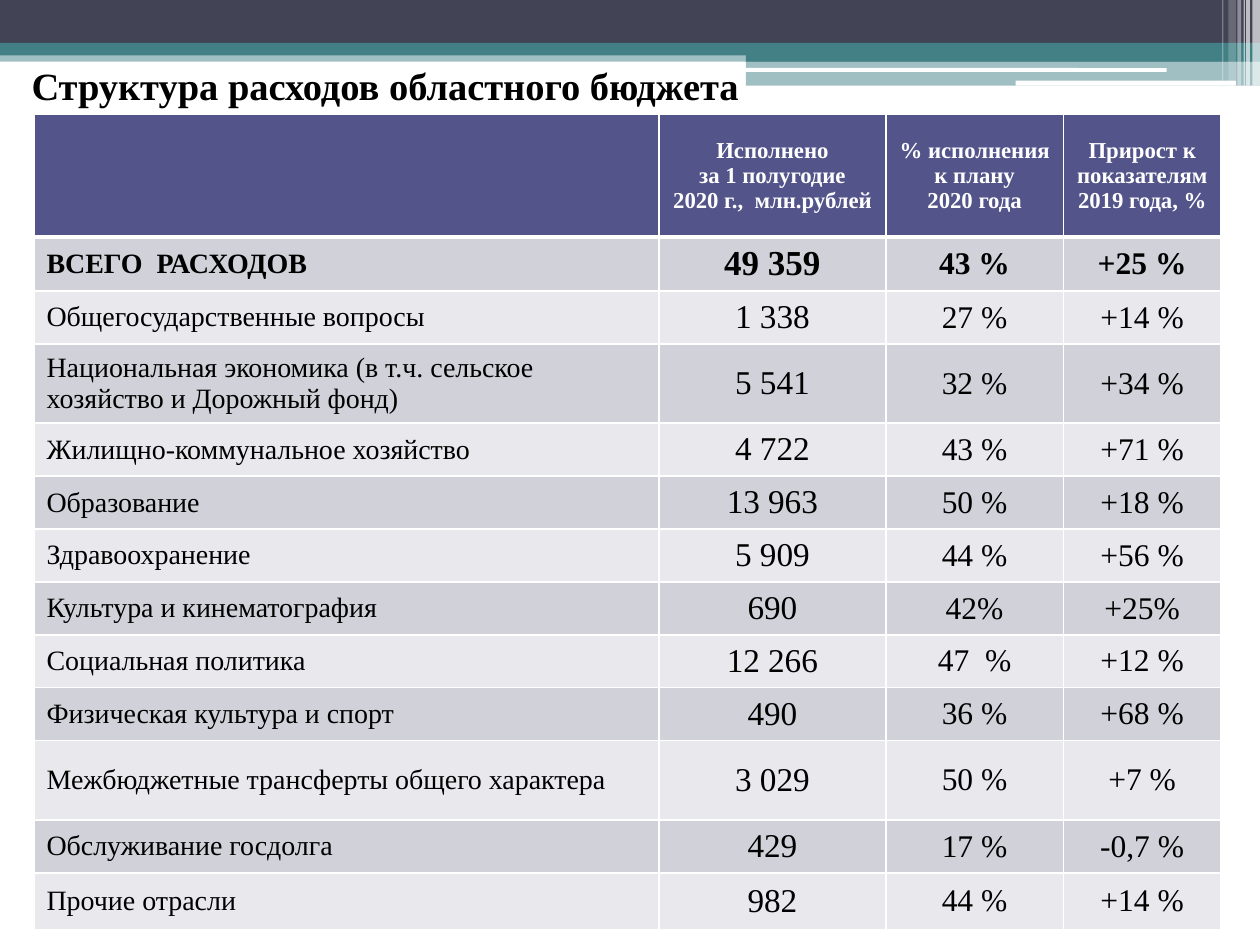
from typing import NamedTuple, Optional

import pptx
import pptx.dml.color
import pptx.enum.shapes
import pptx.enum.text
import pptx.oxml
import pptx.oxml.ns
import pptx.util

Inches = pptx.util.Inches
Pt = pptx.util.Pt
RGBColor = pptx.dml.color.RGBColor
Align = pptx.enum.text.PP_ALIGN
Shape = pptx.enum.shapes.MSO_SHAPE
MIDDLE = pptx.enum.text.MSO_ANCHOR.MIDDLE

WHITE = RGBColor(0xFF, 0xFF, 0xFF)
BLACK = RGBColor(0, 0, 0)
SLATE = RGBColor(0x42, 0x44, 0x56)
TEAL = RGBColor(0x43, 0x80, 0x86)
VIOLET = RGBColor(0x53, 0x54, 0x8A)
DARK = RGBColor(0xD1, 0xD1, 0xDA)
LIGHT = RGBColor(0xE9, 0xE9, 0xED)
FONT = "Times New Roman"


class Bar(NamedTuple):
    left: float
    top: float
    width: float
    height: float
    color: RGBColor
    alpha: int = 100
    round: bool = False


class Item(NamedTuple):
    name: str
    sum: str
    share: str
    growth: str
    height: float = 0.42


BARS = [
    # Bands across the top
    Bar(0, 0.4, 10, 0.09, TEAL, 50),
    Bar(0, 0, 10, 0.34, SLATE),
    Bar(0, 0.34, 10, 0.1, TEAL),
    Bar(5.92, 0.39, 4.08, 0.1, TEAL),
    Bar(5.92, 0.48, 4.08, 0.2, TEAL, 50),
    Bar(5.91, 0.54, 3.35, 0.03, WHITE, round=True),
    Bar(8.06, 0.64, 1.75, 0.04, WHITE, round=True),
    # Thin stripes in the corner
    Bar(9.94, 0, 0.06, 0.68, WHITE, 65),
    Bar(9.89, 0, 0.03, 0.68, WHITE, 65),
    Bar(9.87, 0, 0.01, 0.68, WHITE, 60),
    Bar(9.82, 0, 0.03, 0.68, WHITE, 40),
    Bar(9.75, 0, 0.06, 0.64, WHITE, 20),
    Bar(9.7, 0, 0.01, 0.64, WHITE, 30),
]

COLS = [4.96, 1.8, 1.41, 1.25]
HEAD = Item(
    "",
    "Исполнено\nза 1 полугодие\n2020 г.,  млн.рублей",
    "% исполнения\nк плану\n2020 года",
    "Прирост к показателям 2019 года, %",
    0.97,
)
ITEMS = [
    Item("ВСЕГО  РАСХОДОВ", "49 359", "43 %", "+25 %", 0.43),
    Item("Общегосударственные вопросы", "1 338", "27 %", "+14 %"),
    Item("Национальная экономика (в т.ч. сельское хозяйство и Дорожный фонд)",
         "5 541", "32 %", "+34 %", 0.63),
    Item("Жилищно-коммунальное хозяйство", "4 722", "43 %", "+71 %"),
    Item("Образование", "13 963", "50 %", "+18 %"),
    Item("Здравоохранение", "5 909", "44 %", "+56 %"),
    Item("Культура и кинематография", "690", "42%", "+25%"),
    Item("Социальная политика", "12 266", "47  %", "+12 %"),
    Item("Физическая культура и спорт", "490", "36 %", "+68 %"),
    Item("Межбюджетные трансферты общего характера",
         "3 029", "50 %", "+7 %", 0.63),
    Item("Обслуживание госдолга", "429", "17 %", "-0,7 %"),
    Item("Прочие отрасли", "982", "44 %", "+14 %", 0.45),
]


def draw_bar(slide, bar: Bar) -> None:
    kind = Shape.ROUNDED_RECTANGLE if bar.round else Shape.RECTANGLE
    shape = slide.shapes.add_shape(
        kind, Inches(bar.left), Inches(bar.top),
        Inches(bar.width), Inches(bar.height))
    shape.shadow.inherit = False
    shape.line.fill.background()
    shape.fill.solid()
    shape.fill.fore_color.rgb = bar.color
    if bar.alpha < 100:
        tone = shape.fill._xPr.find(".//" + pptx.oxml.ns.qn("a:srgbClr"))
        tone.append(pptx.oxml.parse_xml(
            f'<a:alpha {pptx.oxml.ns.nsdecls("a")} val="{bar.alpha * 1000}"/>'))


def set_text(frame, text: str, size: int, color: RGBColor, bold: bool,
             align: Optional[Align]) -> None:
    frame.text = text
    for para in frame.paragraphs:
        para.alignment = align
        for run in para.runs:
            font = run.font
            font.name, font.size, font.bold = FONT, Pt(size), bold
            font.color.rgb = color


def add_edges(cell, base: int) -> None:
    props = cell._tc.get_or_add_tcPr()
    for side, width in (("L", 1), ("R", 1), ("T", 1), ("B", base)):
        props.append(pptx.oxml.parse_xml(
            f'<a:ln{side} {pptx.oxml.ns.nsdecls("a")} w="{Pt(width)}">'
            f'<a:solidFill><a:srgbClr val="{WHITE}"/></a:solidFill>'
            f'</a:ln{side}>'))


def draw_table(slide) -> None:
    rows = [HEAD] + ITEMS
    table = slide.shapes.add_table(
        len(rows), len(COLS), Inches(0.27), Inches(0.91),
        Inches(sum(COLS)), Inches(sum(row.height for row in rows))).table
    for col, width in zip(table.columns, COLS):
        col.width = Inches(width)
    for r, row in enumerate(rows):
        table.rows[r].height = Inches(row.height)
        head, total = r == 0, r == 1
        fill = VIOLET if head else DARK if r % 2 else LIGHT
        sizes = [13] * 4 if head else [16, 20 if total else 19, 18, 18]
        for c, text in enumerate(row[:4]):
            cell = table.cell(r, c)
            add_edges(cell, 3 if head else 1)
            cell.fill.solid()
            cell.fill.fore_color.rgb = fill
            cell.vertical_anchor = MIDDLE
            set_text(cell.text_frame, text, sizes[c],
                     WHITE if head else BLACK, head or total,
                     Align.CENTER if c else Align.LEFT)


def main() -> None:
    deck = pptx.Presentation()
    deck.slide_width, deck.slide_height = Inches(10), Inches(7.5)
    slide = deck.slides.add_slide(deck.slide_layouts[5])

    for bar in BARS:
        draw_bar(slide, bar)

    # Title, in front of the bands
    title = slide.shapes.title
    title.left, title.top = Inches(0.15), Inches(0.44)
    title.width, title.height = Inches(9.69), Inches(0.47)
    title.text_frame.vertical_anchor = MIDDLE
    set_text(title.text_frame, "Структура расходов областного бюджета",
             22, BLACK, True, Align.LEFT)
    slide.shapes._spTree.append(title._element)

    draw_table(slide)
    deck.save("out.pptx")


if __name__ == "__main__":
    main()
